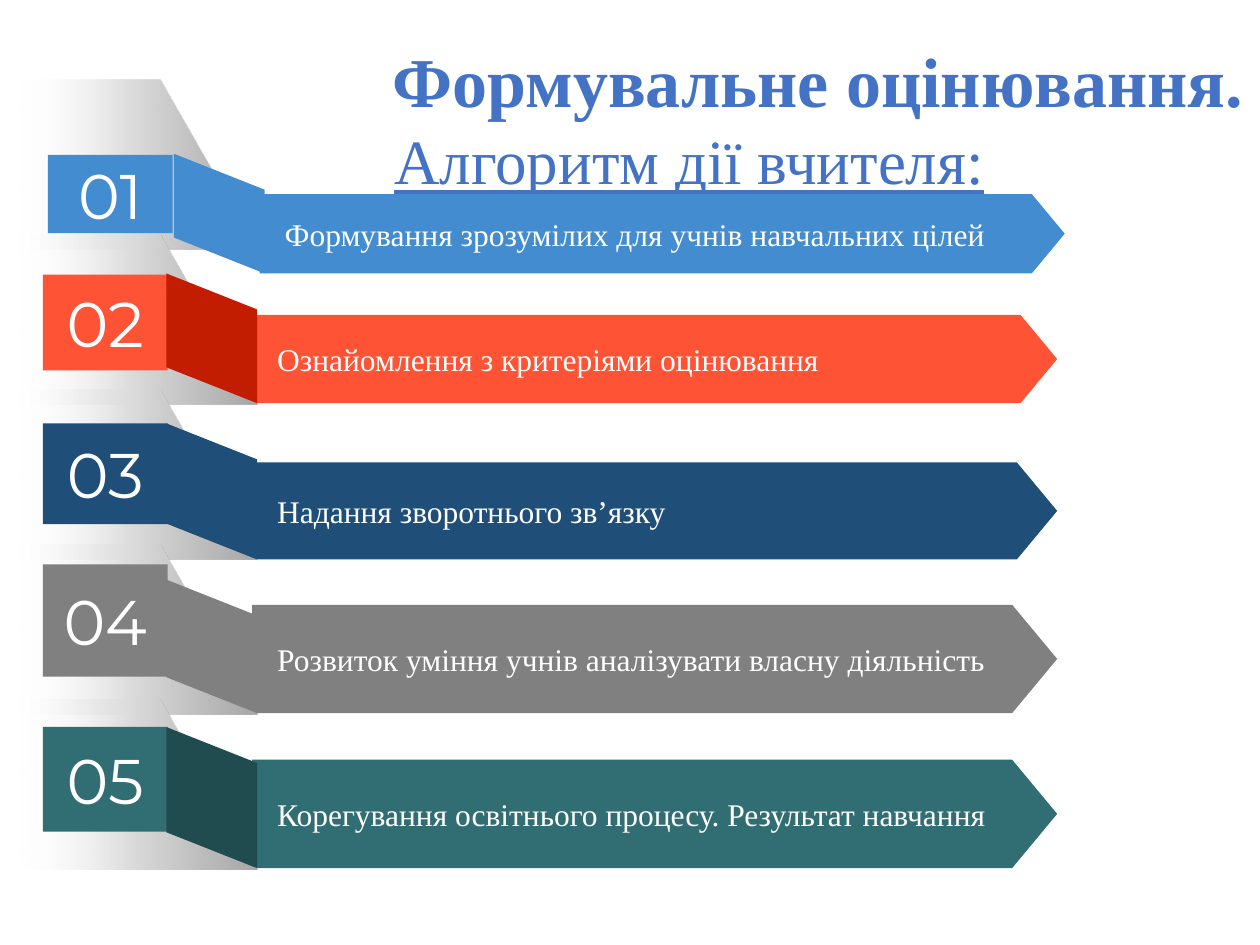
from lxml import etree
from pptx import Presentation
from pptx.dml.color import RGBColor
from pptx.enum.shapes import MSO_SHAPE
from pptx.enum.text import MSO_ANCHOR, MSO_AUTO_SIZE, PP_ALIGN
from pptx.oxml.ns import qn
from pptx.util import Inches, Pt

RECTANGLE, ARROW, FOLD = MSO_SHAPE.RECTANGLE, MSO_SHAPE.PENTAGON, MSO_SHAPE.PARALLELOGRAM
TOP, MIDDLE = MSO_ANCHOR.TOP, MSO_ANCHOR.MIDDLE
LEFT, CENTER, RIGHT, JUSTIFY = PP_ALIGN.LEFT, PP_ALIGN.CENTER, PP_ALIGN.RIGHT, PP_ALIGN.JUSTIFY
NO_AUTOFIT = MSO_AUTO_SIZE.NONE
SERIF, NUMERALS = "Times New Roman", "Montserrat"


def color(value):
    return RGBColor.from_string(value)


def add_block(kind, left, top, width, height, fill):
    block = page.shapes.add_shape(kind, Inches(left), Inches(top), Inches(width), Inches(height))
    block.shadow.inherit = False
    block.fill.solid()
    block.fill.fore_color.rgb = color(fill)
    block.line.fill.background()
    return block


deck = Presentation()
deck.slide_width, deck.slide_height = Inches(10), Inches(7.5)
page = deck.slides.add_slide(deck.slide_layouts[5])

steps = [
    ("Формування зрозумілих для учнів навчальних цілей", "438CCF", "438CCF",
     0.38, 1.23, 0.62, 2.06, 1.54, 0.63, 0.95),
    ("Ознайомлення з критеріями оцінювання", "FE5335", "C31D01",
     0.34, 2.18, 0.76, 2, 2.5, 0.7, 1.03),
    ("Надання зворотнього зв’язку", "1F4E79", "1F4E79",
     0.34, 3.36, 0.8, 2, 3.67, 0.77, 1.08),
    ("Розвиток уміння учнів аналізувати власну діяльність", "808080", "808080",
     0.34, 4.48, 0.89, 2, 4.8, 0.86, 1.06),
    ("Корегування освітнього процесу. Результат навчання", "316E73", "214C4F",
     0.34, 5.77, 0.83, 2, 6.03, 0.86, 1.12),
]
shade_stops = [(0, "A6A6A6", 100), (50, "DDDDDD", 100), (93, "FFFFFF", 0), (100, "FFFFFF", 0)]
fold_width = 0.72

for index, step in enumerate(steps):
    (label, fill, fold_fill, tag_left, tag_top, tag_height,
     arrow_left, arrow_top, arrow_height, fold_length) = step

    arrow = add_block(ARROW, arrow_left, arrow_top, 6.39, arrow_height, fill)
    arrow.adjustments[0] = 0.415
    arrow.text_frame.margin_left = arrow.text_frame.margin_right = Inches(0.2)

    shade_top = 0.63 + 1.23 * index
    builder = page.shapes.build_freeform(0, Inches(shade_top))
    corners = [(1.27, shade_top), (2.04, shade_top + 1.35), (0, shade_top + 1.35)]
    builder.add_line_segments([(Inches(x), Inches(y)) for x, y in corners])
    shade = builder.convert_to_shape()
    shade.shadow.inherit = False
    shade.line.fill.background()
    shade.fill.gradient()
    shade.fill.gradient_angle = 180
    stop_list = shade.element.spPr.find(qn("a:gradFill")).find(qn("a:gsLst"))
    for stop in list(stop_list):
        stop_list.remove(stop)
    for position, value, opacity in shade_stops:
        stop = etree.SubElement(stop_list, qn("a:gs"), pos=str(position * 1000))
        stop_color = etree.SubElement(stop, qn("a:srgbClr"), val=value)
        etree.SubElement(stop_color, qn("a:alpha"), val=str(opacity * 1000))

    tag = add_block(RECTANGLE, tag_left, tag_top, 0.99, tag_height, fill)

    fold_center = arrow_left - 0.32
    fold_middle = arrow_top + arrow_height - fold_length / 2
    fold = add_block(FOLD, fold_center - fold_length / 2, fold_middle - fold_width / 2,
                     fold_length, fold_width, fold_fill)
    fold.adjustments[0] = 0.396
    fold.rotation = 270

    for block, text, size, name, alignment in [
        (arrow, label, 18, SERIF, JUSTIFY),
        (tag, f"{index + 1:02}", 36, NUMERALS, CENTER),
    ]:
        block.text_frame.vertical_anchor = MIDDLE
        para = block.text_frame.paragraphs[0]
        para.alignment = alignment
        span = para.add_run()
        span.text = text
        for key, value in {"size": Pt(size), "name": name}.items():
            setattr(span.font, key, value)
        span.font.color.rgb = color("FFFFFF")

title = page.shapes.title
title.left, title.top, title.width, title.height = Inches(0.97), Inches(0.25), Inches(9), Inches(1.32)
frame = title.text_frame
frame.word_wrap = True
frame.auto_size = NO_AUTOFIT
frame.vertical_anchor = TOP
heading_lines = [
    ("Формувальне оцінювання.", RIGHT, {"size": Pt(40), "bold": True, "underline": False}),
    ("Алгоритм дії вчителя:", CENTER, {"size": Pt(36), "bold": False, "underline": True}),
]
for index, (text, alignment, look) in enumerate(heading_lines):
    para = frame.add_paragraph() if index else frame.paragraphs[0]
    para.alignment = alignment
    para.line_spacing = 1.0
    para.space_before = Pt(0)
    span = para.add_run()
    span.text = text
    for key, value in {"name": SERIF, **look}.items():
        setattr(span.font, key, value)
    span.font.color.rgb = color("4472C4")

deck.save("out.pptx")
